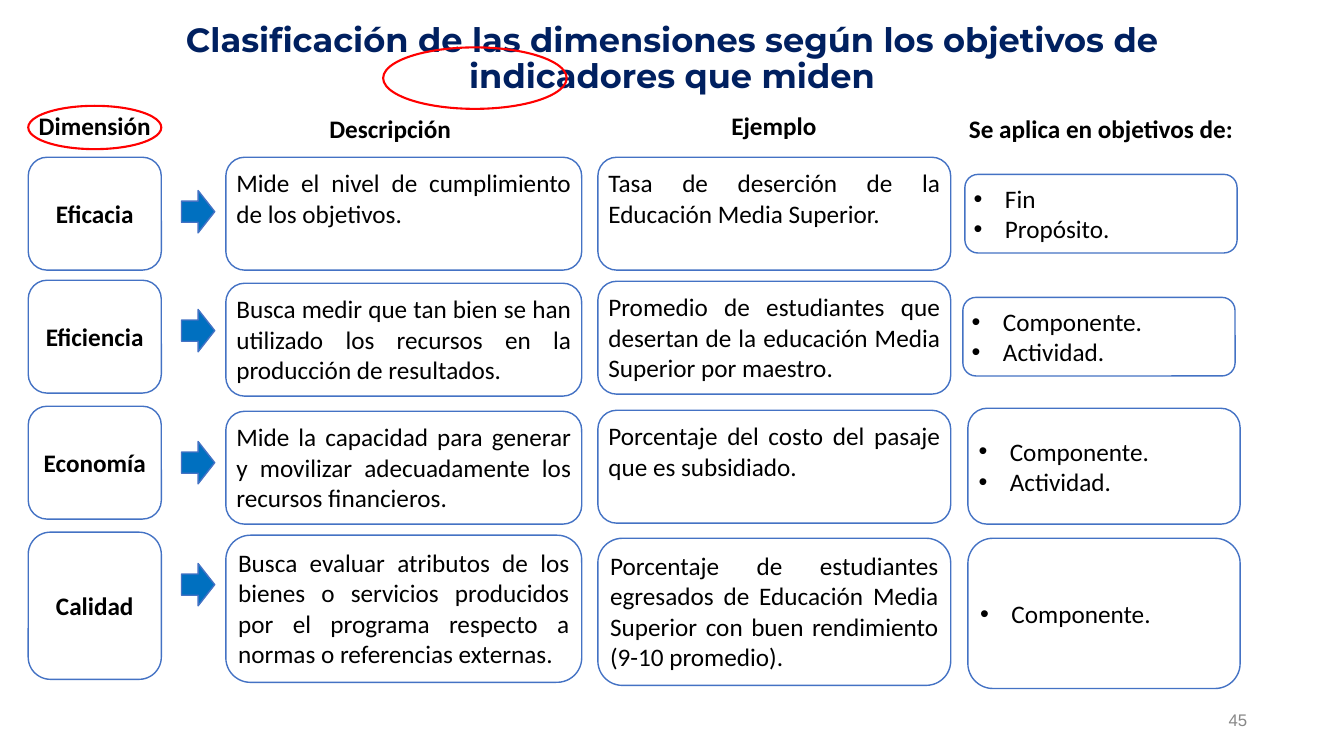
"""Builds the slide that sorts indicators by dimension."""
from lxml import etree
from pptx import Presentation
from pptx.dml.color import RGBColor
from pptx.enum.shapes import MSO_SHAPE
from pptx.enum.text import MSO_ANCHOR, MSO_AUTO_SIZE, PP_ALIGN
from pptx.oxml.ns import qn
from pptx.util import Inches, Pt

ROUND, ARROW, OVAL = MSO_SHAPE.ROUNDED_RECTANGLE, MSO_SHAPE.RIGHT_ARROW, MSO_SHAPE.OVAL
TOP, MIDDLE, BOTTOM = MSO_ANCHOR.TOP, MSO_ANCHOR.MIDDLE, MSO_ANCHOR.BOTTOM
CENTER, RIGHT, JUSTIFY = PP_ALIGN.CENTER, PP_ALIGN.RIGHT, PP_ALIGN.JUSTIFY
NO_FIT = MSO_AUTO_SIZE.NONE

BLACK = RGBColor(0x00, 0x00, 0x00)
WHITE = RGBColor(0xFF, 0xFF, 0xFF)
NAVY = RGBColor(0x00, 0x20, 0x60)
BLUE = RGBColor(0x00, 0x70, 0xC0)
EDGE = RGBColor(0x44, 0x72, 0xC4)
RED = RGBColor(0xFF, 0x00, 0x00)
GRAY = RGBColor(0x88, 0x88, 0x88)

PLAIN = {"name": "Calibri", "size": Pt(18), "bold": False}
BOLD = {**PLAIN, "bold": True}
TITLE = {"name": "Montserrat", "size": Pt(24), "bold": True}
SMALL = {"name": "Arial", "size": Pt(12), "bold": False}
FRAME = {side: Inches(0.05) for side in
         ("margin_left", "margin_top", "margin_right", "margin_bottom")}

HEADS = [
    ("Dimensión", (0.28, 1.05, 1.32, 0.4)),
    ("Descripción", (3.16, 1.08, 1.42, 0.4)),
    ("Ejemplo", (7.15, 1.05, 1.05, 0.4)),
    ("Se aplica en objetivos de:", (9.43, 1.08, 2.98, 0.4)),
]
NAME_X, ARROW_X, TEXT_X, CASE_X = 0.28, 1.8, 2.24, 5.93
NAME_W, TEXT_W, CASE_W, GOAL_W = 1.32, 3.53, 3.5, 2.7
ROWS = [
    {"height": 1.12, "arrow": 1.89,
     "name": (1.56, "Eficacia"),
     "text": (1.56, "Mide el nivel de cumplimiento de los objetivos."),
     "case": (1.56, "Tasa de deserción de la Educación Media Superior."),
     "goals": (9.57, 1.73, 0.78, ["Fin", "Propósito."])},
    {"height": 1.12, "arrow": 3.07,
     "name": (2.78, "Eficiencia"),
     "text": (2.81, "Busca medir que tan bien se han utilizado los recursos "
                    "en la producción de resultados."),
     "case": (2.79, "Promedio de estudiantes que desertan de la educación "
                    "Media Superior por maestro."),
     "goals": (9.55, 2.95, 0.78, ["Componente.", "Actividad."])},
    {"height": 1.12, "arrow": 4.38,
     "name": (4.03, "Economía"),
     "text": (4.08, "Mide la capacidad para generar y movilizar adecuadamente "
                    "los recursos financieros."),
     "case": (4.07, "Porcentaje del costo del pasaje que es subsidiado."),
     "goals": (9.6, 4.05, 1.15, ["Componente.", "Actividad."])},
    {"height": 1.46, "arrow": 5.59,
     "name": (5.28, "Calidad"),
     "text": (5.31, "Busca evaluar atributos de los bienes o servicios "
                    "producidos por el programa respecto a normas o "
                    "referencias externas."),
     "case": (5.34, "Porcentaje de estudiantes egresados de Educación Media "
                    "Superior con buen rendimiento (9-10 promedio)."),
     "goals": (9.6, 5.34, 1.49, ["Componente."])},
]


def apply(item, values):
    """Set each value of a dict as an attribute."""
    for key, value in values.items():
        setattr(item, key, value)


def add_bullet(para):
    """Give a paragraph a hanging round bullet."""
    props = para._p.get_or_add_pPr()
    props.set("marL", str(Inches(0.31)))
    props.set("indent", str(Inches(-0.31)))
    etree.SubElement(props, qn("a:buFont")).set("typeface", "Arial")
    etree.SubElement(props, qn("a:buChar")).set("char", "•")


def write(frame, lines, font, align, color=BLACK, bullet=False):
    """Fill a text frame with one paragraph for each line."""
    for index, line in enumerate(lines):
        para = frame.add_paragraph() if index else frame.paragraphs[0]
        if bullet:
            add_bullet(para)
        para.alignment = align
        run = para.add_run()
        run.text = line
        apply(run.font, font)
        run.font.color.rgb = color


def add_label(slide, text, place, font, align, color=BLACK, **frame):
    """Add a line of text that does not wrap."""
    box = slide.shapes.add_textbox(*map(Inches, place))
    apply(box.text_frame, {"word_wrap": False, **frame})
    write(box.text_frame, [text], font, align, color)


def add_form(slide, kind, place, fill=None, edge=EDGE, width=1):
    """Add a preset shape with its fill and outline."""
    form = slide.shapes.add_shape(kind, *map(Inches, place))
    form.shadow.inherit = False
    if fill is None:
        form.fill.background()
    else:
        form.fill.solid()
        form.fill.fore_color.rgb = fill
    form.line.color.rgb = edge
    form.line.width = Pt(width)
    return form


def add_card(slide, place, lines, font, align, anchor, bullet=False):
    """Add a rounded card with text."""
    frame = add_form(slide, ROUND, place, WHITE).text_frame
    apply(frame, {**FRAME, "word_wrap": True, "vertical_anchor": anchor})
    write(frame, lines, font, align, bullet=bullet)


def add_row(slide, row):
    """Add the cards and the arrow of one dimension."""
    high = row["height"]
    top, name = row["name"]
    add_card(slide, (NAME_X, top, NAME_W, high), [name], BOLD, CENTER, MIDDLE)
    add_form(slide, ARROW, (ARROW_X, row["arrow"], 0.33, 0.42), BLUE)
    for key, left, width in (("text", TEXT_X, TEXT_W), ("case", CASE_X, CASE_W)):
        top, words = row[key]
        add_card(slide, (left, top, width, high), [words], PLAIN, JUSTIFY, TOP)
    left, top, high, goals = row["goals"]
    add_card(slide, (left, top, GOAL_W, high), goals, PLAIN, JUSTIFY, MIDDLE, True)


def set_title(slide, text):
    """Place and format the title."""
    title = slide.shapes.title
    sides = ("left", "top", "width", "height")
    apply(title, dict(zip(sides, map(Inches, (0.91, 0.37, 11.51, 0.63)))))
    frame = title.text_frame
    apply(frame, {**FRAME, "word_wrap": True, "auto_size": NO_FIT,
                  "vertical_anchor": BOTTOM})
    write(frame, [text], TITLE, CENTER, NAVY)
    frame.paragraphs[0].line_spacing = 0.9


def main():
    """Build and save the slide."""
    deck = Presentation()
    deck.slide_width, deck.slide_height = Inches(13.33), Inches(7.5)
    slide = deck.slides.add_slide(deck.slide_layouts[5])
    set_title(slide, "Clasificación de las dimensiones según los objetivos de "
                     "indicadores que miden")
    for text, place in HEADS:
        add_label(slide, text, place, BOLD, CENTER)
    for row in ROWS:
        add_row(slide, row)
    for place in ((3.8, 0.47, 1.82, 0.61), (0.28, 1.05, 1.32, 0.43)):
        add_form(slide, OVAL, place, edge=RED, width=1.5)
    add_label(slide, "45", (12.13, 7, 0.29, 0.29), SMALL, RIGHT, GRAY,
              vertical_anchor=MIDDLE, **FRAME)
    deck.save("out.pptx")


if __name__ == "__main__":
    main()
